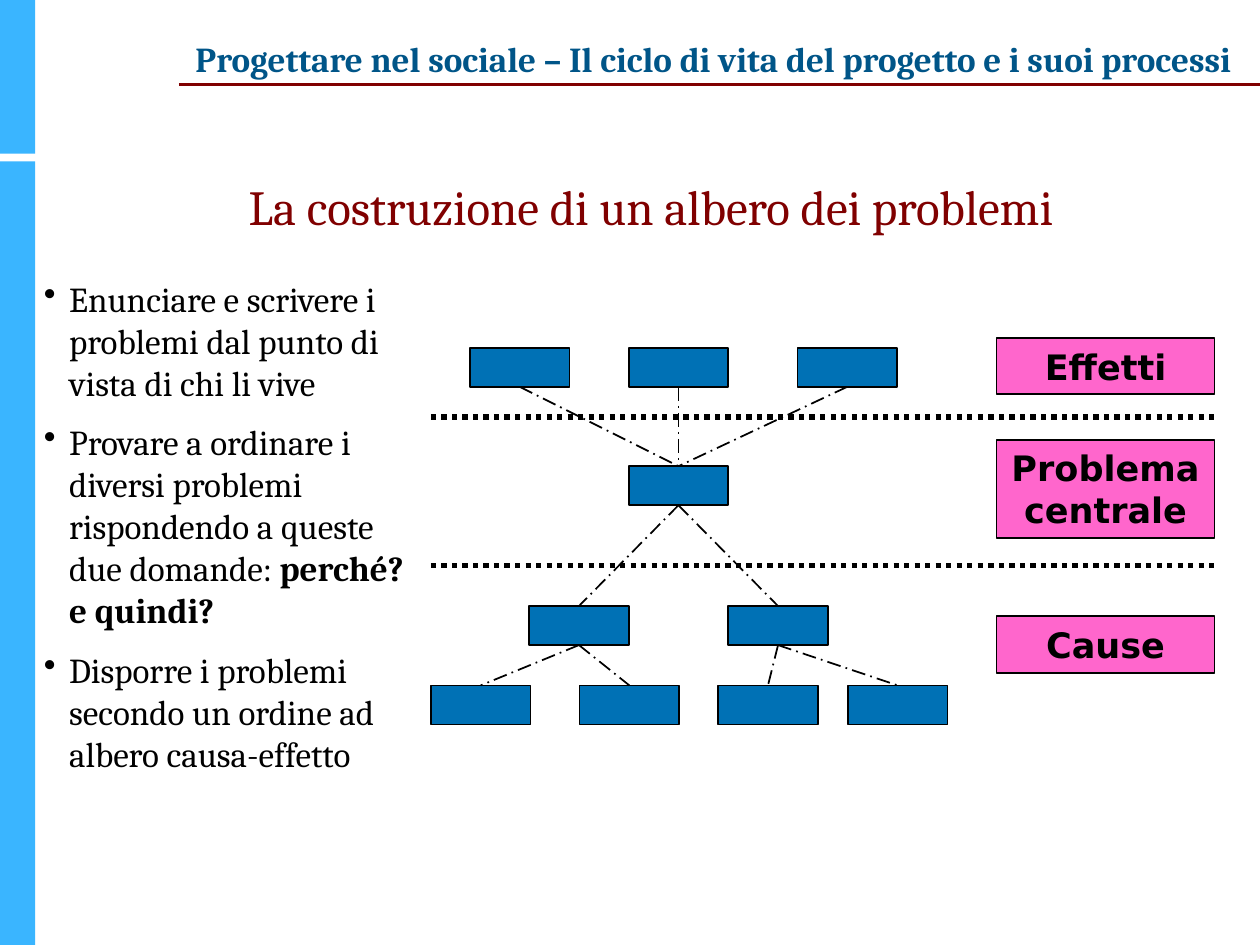
from pptx import Presentation
from pptx.dml.color import RGBColor
from pptx.enum.dml import MSO_LINE
from pptx.enum.shapes import MSO_CONNECTOR, MSO_SHAPE
from pptx.enum.text import MSO_ANCHOR, PP_ALIGN
from pptx.oxml.ns import qn
from pptx.util import Inches, Pt
from lxml.etree import SubElement

SKY = RGBColor(0x3A, 0xB5, 0xFF)
NAVY = RGBColor(0x00, 0x55, 0x88)
MAROON = RGBColor(0x80, 0x00, 0x00)
BLUE = RGBColor(0x00, 0x71, 0xB5)
PINK = RGBColor(0xFF, 0x66, 0xCC)
BLACK = RGBColor(0x00, 0x00, 0x00)
SERIF, SANS = "Cambria", "DejaVu Sans"
TOP, BOTTOM = 0, 2  # connection sites of a rectangle
NODE_W, NODE_H = 0.79, 0.31

# Node positions, relative to the tree's box
NODES = {
    "effect 1": (0.31, 0.08), "effect 2": (1.57, 0.08), "effect 3": (2.91, 0.08),
    "problem": (1.57, 1.02),
    "cause 1": (0.78, 2.13), "cause 2": (2.36, 2.13),
    "cause 1.1": (0, 2.76), "cause 1.2": (1.18, 2.76),
    "cause 2.1": (2.28, 2.76), "cause 2.2": (3.31, 2.76),
}
# Upper node, lower node
LINKS = [
    ("effect 1", "problem"), ("effect 2", "problem"), ("effect 3", "problem"),
    ("problem", "cause 1"), ("problem", "cause 2"),
    ("cause 1", "cause 1.1"), ("cause 1", "cause 1.2"),
    ("cause 2", "cause 2.1"), ("cause 2", "cause 2.2"),
]
# Text, top relative to the tree's box, height
LEVELS = [("Effetti", 0, 0.45), ("Problema centrale", 0.81, 0.78), ("Cause", 2.21, 0.45)]
BULLETS = [
    [("Enunciare e scrivere i problemi dal punto di vista di chi li vive", False)],
    [("Provare a ordinare i diversi problemi rispondendo a queste due domande: ", False),
     ("perché? e quindi?", True)],
    [("Disporre i problemi secondo un ordine ad albero causa-effetto", False)],
]


def set_font(font, size, name, color, bold=False):
    font.size, font.name, font.bold = Pt(size), name, bold
    font.color.rgb = color


def add_rect(slide, x, y, w, h, fill, line=None):
    sp = slide.shapes.add_shape(MSO_SHAPE.RECTANGLE, Inches(x), Inches(y), Inches(w), Inches(h))
    sp.shadow.inherit = False
    sp.fill.solid()
    sp.fill.fore_color.rgb = fill
    if line is None:
        sp.line.fill.background()
    else:
        sp.line.color.rgb = line
        sp.line.width = Pt(1)
    return sp


def add_line(slide, x1, y1, x2, y2, color, width, dash=None):
    line = slide.shapes.add_connector(
        MSO_CONNECTOR.STRAIGHT, Inches(x1), Inches(y1), Inches(x2), Inches(y2))
    line.line.color.rgb = color
    line.line.width = Pt(width)
    if dash is not None:
        line.line.dash_style = dash
    SubElement(line._element.spPr, qn("a:effectLst"))
    return line


def add_text(slide, x, y, w, h, wrap=True):
    tf = slide.shapes.add_textbox(Inches(x), Inches(y), Inches(w), Inches(h)).text_frame
    tf.word_wrap = wrap
    return tf


def add_sidebar(slide, x, y, w, h):
    add_rect(slide, x, y + 1.28, w, h - 1.28, SKY)
    add_rect(slide, x, y, w, 1.22, SKY)


def add_header(slide, x, y, w, h):
    add_line(slide, x + 0.08, y + 0.42, 10, y + 0.42, MAROON, 1.5)
    p = add_text(slide, x, y, w, h, wrap=False).paragraphs[0]
    p.text = "Progettare nel sociale – Il ciclo di vita del progetto e i suoi processi"
    p.alignment = PP_ALIGN.CENTER
    set_font(p.runs[0].font, 20, SERIF, NAVY, bold=True)


def add_title(slide, x, y, w, h):
    tf = add_text(slide, x, y, w, h)
    tf.vertical_anchor = MSO_ANCHOR.BOTTOM
    p = tf.paragraphs[0]
    p.text = "La costruzione di un albero dei problemi"
    p.alignment = PP_ALIGN.CENTER
    p.line_spacing = 0.9
    set_font(p.runs[0].font, 28, SERIF, MAROON)


def add_bullets(slide, x, y, w, h):
    tf = add_text(slide, x, y, w, h)
    for i, parts in enumerate(BULLETS):
        p = tf.add_paragraph() if i else tf.paragraphs[0]
        p.space_before = Pt(10 if i else 0)
        pPr = p._p.get_or_add_pPr()
        pPr.set("marL", str(Inches(0.2)))
        pPr.set("indent", str(-Inches(0.2)))
        SubElement(pPr, qn("a:buChar")).set("char", "•")
        for text, bold in parts:
            r = p.add_run()
            r.text = text
            set_font(r.font, 20, SERIF, BLACK, bold)


def add_problem_tree(slide, x, y, w):
    nodes = {name: add_rect(slide, x + dx, y + dy, NODE_W, NODE_H, BLUE, BLACK)
             for name, (dx, dy) in NODES.items()}

    # Level labels along the right edge
    label_w = 1.73
    for text, dy, h in LEVELS:
        sp = add_rect(slide, x + w - label_w, y + dy, label_w, h, PINK, BLACK)
        tf = sp.text_frame
        tf.word_wrap = True
        tf.vertical_anchor = MSO_ANCHOR.MIDDLE
        p = tf.paragraphs[0]
        p.text = text
        p.alignment = PP_ALIGN.CENTER
        set_font(p.runs[0].font, 20, SANS, BLACK, bold=True)

    # Dotted separators between levels
    for dy in (0.63, 1.81):
        add_line(slide, x, y + dy, x + w, y + dy, BLACK, 3, MSO_LINE.ROUND_DOT)

    # Links from each upper node to its lower node
    for upper, lower in LINKS:
        link = add_line(slide, x, y, x, y, BLACK, 1, MSO_LINE.LONG_DASH_DOT)
        link.begin_connect(nodes[upper], BOTTOM)
        link.end_connect(nodes[lower], TOP)


def main():
    prs = Presentation()
    prs.slide_width, prs.slide_height = Inches(10), Inches(7.5)
    slide = prs.slides.add_slide(prs.slide_layouts[6])
    add_sidebar(slide, 0, 0, 0.28, 7.5)
    add_header(slide, 1.34, 0.25, 8.65, 0.7)
    add_title(slide, 0.33, 1.25, 9.67, 0.67)
    add_problem_tree(slide, 3.42, 2.68, 6.22)
    add_bullets(slide, 0.25, 2.15, 3.08, 4.6)
    prs.save("out.pptx")


if __name__ == "__main__":
    main()
